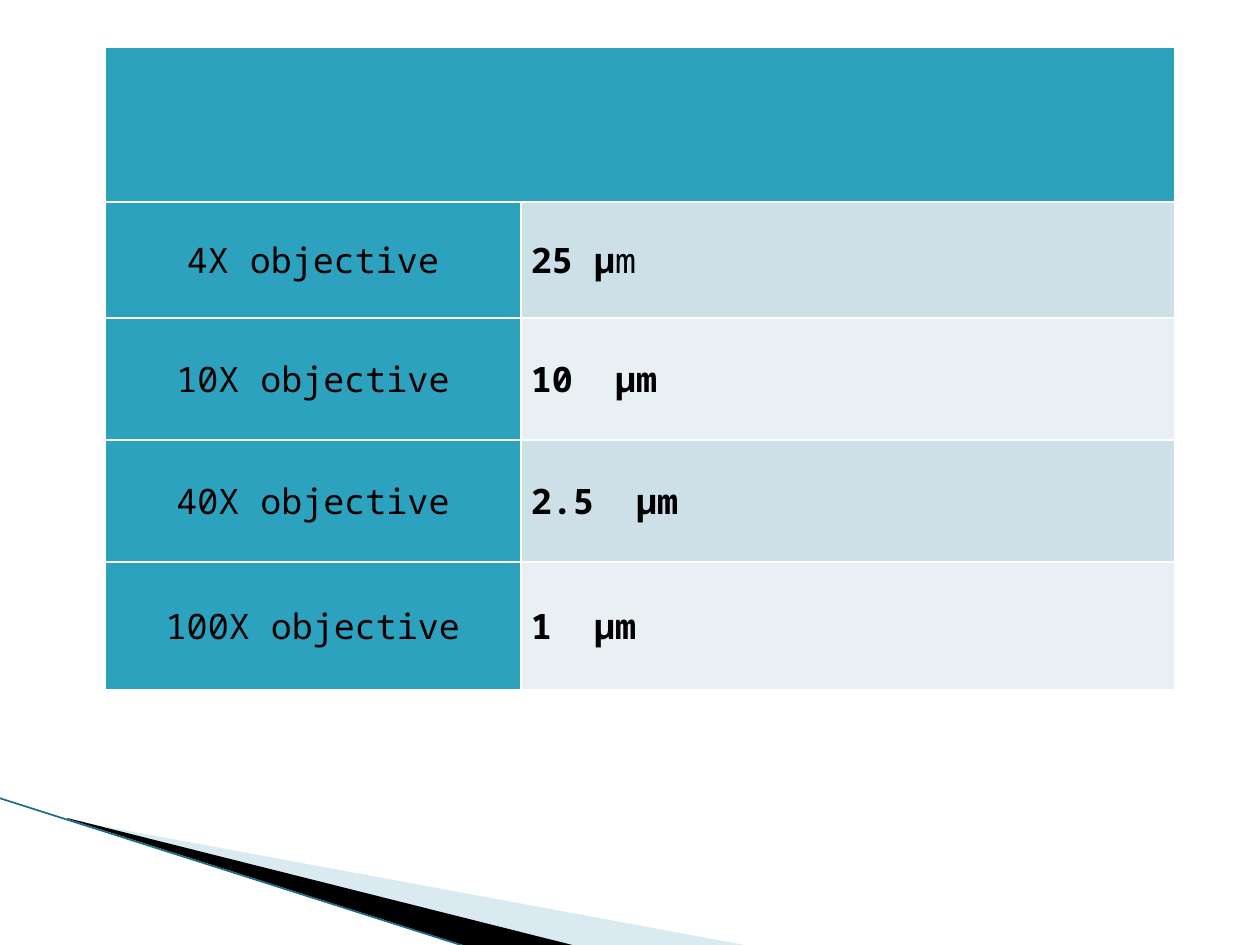
import pptx
import pptx.dml.color
import pptx.enum.shapes
import pptx.enum.text
import pptx.oxml
import pptx.oxml.ns
import pptx.util
from dataclasses import dataclass
from lxml import etree

EMU_PER_PX = 914400 / 126


@dataclass(frozen=True)
class Theme:
    font: str = "Noto Sans Mono"
    text_size: int = 20
    text: str = "000000"
    accent: str = "2DA2BF"
    bands: tuple = ("CDE0E8", "E8F0F4")
    border: str = "FFFFFF"
    border_width: float = 1
    pale_wedge: str = "A0CBDC"
    dark_wedge: str = "000000"
    edge_line: str = "1A6E82"
    edge_width: float = 0.95


THEME = Theme()
COLUMN_WIDTHS = (416, 654)
ROW_HEIGHTS = (155, 116, 122, 122, 128)
# Each resolution is a list of (text, bold) runs
RESOLUTIONS = (
    ("4X objective", [("25 µ", True), ("m", False)]),
    ("10X objective", [("10  µm", True)]),
    ("40X objective", [("2.5  µm", True)]),
    ("100X objective", [("1  µm", True)]),
)


def px(length):
    return pptx.util.Emu(round(length * EMU_PER_PX))


def rgb(code):
    return pptx.dml.color.RGBColor.from_string(code)


def sub_element(parent, tag, **attributes):
    return etree.SubElement(parent, pptx.oxml.ns.qn(tag), **attributes)


def write_text(paragraph, text, *, bold=False, size=THEME.text_size, color=THEME.text):
    run = paragraph.add_run()
    run.text = text
    run.font.name = THEME.font
    run.font.size = pptx.util.Pt(size)
    run.font.bold = bold
    run.font.color.rgb = rgb(color)


def style_cell(cell, fill):
    properties = cell._tc.get_or_add_tcPr()
    width = str(pptx.util.Pt(THEME.border_width))
    for side in ("a:lnL", "a:lnR", "a:lnT", "a:lnB"):
        border = sub_element(properties, side, w=width)
        sub_element(sub_element(border, "a:solidFill"), "a:srgbClr", val=THEME.border)
    cell.fill.solid()
    cell.fill.fore_color.rgb = rgb(fill)
    cell.vertical_anchor = pptx.enum.text.MSO_ANCHOR.MIDDLE
    cell.margin_left = cell.margin_right = px(10)
    cell.margin_top = cell.margin_bottom = 0


def add_resolution_table(slide):
    table = slide.shapes.add_table(
        len(ROW_HEIGHTS), len(COLUMN_WIDTHS), px(105), px(47),
        px(sum(COLUMN_WIDTHS)), px(sum(ROW_HEIGHTS))).table
    for column, width in zip(table.columns, COLUMN_WIDTHS):
        column.width = px(width)
    for row, height in zip(table.rows, ROW_HEIGHTS):
        row.height = px(height)

    # Empty header band
    table.cell(0, 0).merge(table.cell(0, 1))
    for column in range(len(COLUMN_WIDTHS)):
        style_cell(table.cell(0, column), THEME.accent)

    # One row for each objective
    for index, (objective, resolution) in enumerate(RESOLUTIONS):
        objective_cell = table.cell(index + 1, 0)
        style_cell(objective_cell, THEME.accent)
        label = objective_cell.text_frame.paragraphs[0]
        label.alignment = pptx.enum.text.PP_ALIGN.CENTER
        label._p.get_or_add_pPr().set("rtl", "1")
        write_text(label, objective)

        resolution_cell = table.cell(index + 1, 1)
        style_cell(resolution_cell, THEME.bands[index % 2])
        for text, bold in resolution:
            write_text(resolution_cell.text_frame.paragraphs[0], text, bold=bold)


def add_wedge(slide, points, color, opacity=100):
    outline = slide.shapes.build_freeform(*points[0], scale=EMU_PER_PX)
    outline.add_line_segments(points[1:], close=True)
    wedge = outline.convert_to_shape()
    wedge.shadow.inherit = False
    wedge.line.fill.background()
    wedge.fill.solid()
    wedge.fill.fore_color.rgb = rgb(color)
    if opacity < 100:
        tint = wedge._element.spPr.find(".//" + pptx.oxml.ns.qn("a:srgbClr"))
        sub_element(tint, "a:alpha", val=str(opacity * 1000))


def add_line(slide, start, end, color, width):
    line = slide.shapes.add_connector(
        pptx.enum.shapes.MSO_CONNECTOR.STRAIGHT, *map(px, start + end))
    line.line.color.rgb = rgb(color)
    line.line.width = pptx.util.Pt(width)
    sub_element(line._element.spPr, "a:effectLst")


def main():
    presentation = pptx.Presentation()
    presentation.slide_width = px(1260)
    presentation.slide_height = px(945)
    slide = presentation.slides.add_slide(presentation.slide_layouts[6])

    # Corner decoration
    add_wedge(slide, [(69, 820), (750, 946), (575, 946), (69, 819)],
              THEME.pale_wedge, opacity=40)
    add_wedge(slide, [(67, 818), (576, 946), (469, 947), (68, 819)], THEME.dark_wedge)
    add_line(slide, (-1, 798), (467, 947), THEME.edge_line, THEME.edge_width)

    add_resolution_table(slide)
    presentation.save("out.pptx")


if __name__ == "__main__":
    main()
